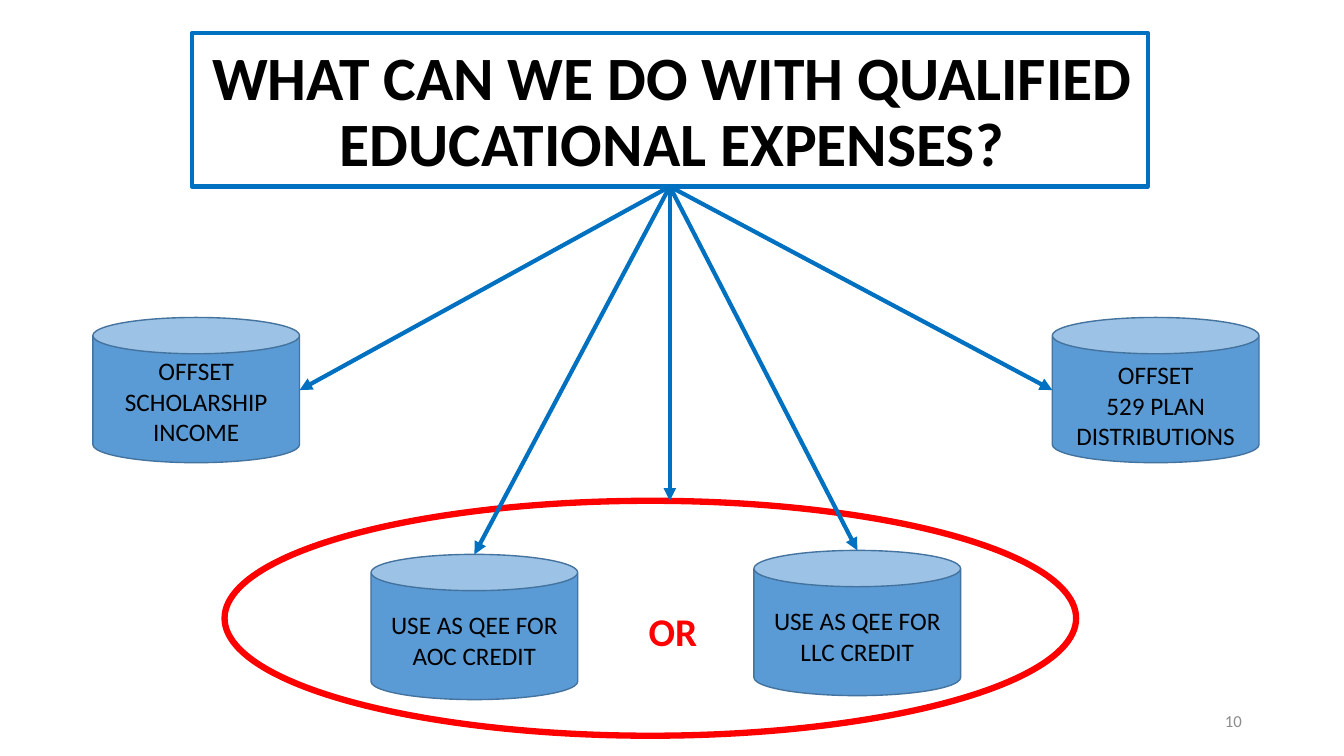
import pptx
import pptx.dml.color
import pptx.enum.shapes
import pptx.enum.text
import pptx.oxml
import pptx.oxml.ns
import pptx.util

Cm, Pt = pptx.util.Cm, pptx.util.Pt
RGBColor = pptx.dml.color.RGBColor
MSO_SHAPE = pptx.enum.shapes.MSO_SHAPE
ANCHOR = pptx.enum.text.MSO_ANCHOR
ALIGN = pptx.enum.text.PP_ALIGN

BLACK = RGBColor(0x00, 0x00, 0x00)
BLUE = RGBColor(0x00, 0x70, 0xC0)
CAN_FILL = RGBColor(0x5B, 0x9B, 0xD5)
CAN_LINE = RGBColor(0x43, 0x73, 0x9E)
RED = RGBColor(0xFF, 0x00, 0x00)
GREY = RGBColor(0x8C, 0x8C, 0x8C)

CAN_W, CAN_H = 5.21, 3.66


def add_text(s, box, lines, size, color=BLACK, bold=False,
             align=ALIGN.CENTER, anchor=ANCHOR.TOP, spacing=None):
    tf = s.shapes.add_textbox(*map(Cm, box)).text_frame
    tf.word_wrap = True
    tf.vertical_anchor = anchor
    for i, line in enumerate(lines):
        p = tf.paragraphs[0] if i == 0 else tf.add_paragraph()
        p.text = line
        p.alignment = align
        p.line_spacing = spacing
        p.font.name = "Calibri"
        p.font.size = Pt(size)
        p.font.bold = bold
        p.font.color.rgb = color


def add_figure(s, kind, box, line, width, fill=None):
    sp = s.shapes.add_shape(kind, *map(Cm, box))
    sp.shadow.inherit = False
    if fill is None:
        sp.fill.background()
    else:
        sp.fill.solid()
        sp.fill.fore_color.rgb = fill
    sp.line.color.rgb = line
    sp.line.width = Pt(width)


def add_arrow(s, start, end):
    c = s.shapes.add_connector(pptx.enum.shapes.MSO_CONNECTOR.STRAIGHT,
                               *map(Cm, start + end))
    c.line.color.rgb = BLUE
    c.line.width = Pt(3)
    qn = pptx.oxml.ns.qn
    ln = c.line._get_or_add_ln()
    ln.append(ln.makeelement(qn("a:tailEnd"), {"type": "triangle"}))
    sp_pr = c._element.spPr
    sp_pr.append(sp_pr.makeelement(qn("a:effectLst"), {}))


def add_title(s, box):
    """Draw the framed question and return the middle of its lower edge."""
    x, y, w, h = box
    add_figure(s, MSO_SHAPE.RECTANGLE, box, BLUE, 3)
    add_text(s, (x - 2.49, y + 0.18, w + 5.11, h - 0.18),
             ["WHAT CAN WE DO WITH QUALIFIED EDUCATIONAL EXPENSES?"],
             44, bold=True, anchor=ANCHOR.MIDDLE, spacing=0.9)
    return x + w / 2, y + h


def add_can(s, x, y, lines, label_drop):
    add_figure(s, MSO_SHAPE.CAN, (x, y, CAN_W, CAN_H), CAN_LINE, 1, CAN_FILL)
    add_text(s, (x + 0.19, y + label_drop, CAN_W - 0.38, CAN_H - label_drop - 0.2),
             lines, 18)


def add_credit_choice(s, box):
    """Draw the ellipse with the two credits; return the tops of the cans."""
    x, y, w, h = box
    aoc_x, aoc_y = x + 3.69, y + 1.35
    llc_x, llc_y = x + 13.34, y + 1.25
    add_can(s, aoc_x, aoc_y, ["USE AS QEE FOR AOC CREDIT"], 1.27)
    add_can(s, llc_x, llc_y, ["USE AS QEE FOR LLC CREDIT"], 1.27)
    add_text(s, (x + 10.44, y + 2.57, 2.01, 1.45), ["OR"], 28, RED,
             bold=True, align=ALIGN.LEFT)
    add_figure(s, MSO_SHAPE.OVAL, box, RED, 4.5)
    return (aoc_x + CAN_W / 2, aoc_y), (llc_x + CAN_W / 2, llc_y)


def build_slide(s):
    # Question
    hub = add_title(s, (4.83, 0.84, 24.1, 3.86))

    # Offsets on either side
    left_x, right_x, side_y = 2.34, 26.52, 8
    add_can(s, left_x, side_y, ["OFFSET SCHOLARSHIP INCOME"], 0.84)
    add_can(s, right_x, side_y, ["OFFSET", "529 PLAN DISTRIBUTIONS"], 0.94)

    # Choice between the credits
    choice_y = 12.62
    aoc_top, llc_top = add_credit_choice(s, (5.66, choice_y, 21.46, 5.92))

    # Arrows from the question to every use
    side_mid = side_y + CAN_H / 2
    for end in ((left_x + CAN_W, side_mid), aoc_top, (hub[0], choice_y),
                llc_top, (right_x, side_mid)):
        add_arrow(s, hub, end)

    # Slide number
    add_text(s, (23.93, 17.65, 7.62, 1.02), ["10"], 12, GREY,
             align=ALIGN.RIGHT, anchor=ANCHOR.MIDDLE)


def main():
    prs = pptx.Presentation()
    prs.slide_width, prs.slide_height = Cm(33.87), Cm(19.05)
    build_slide(prs.slides.add_slide(prs.slide_layouts[6]))
    prs.save("out.pptx")


if __name__ == "__main__":
    main()
